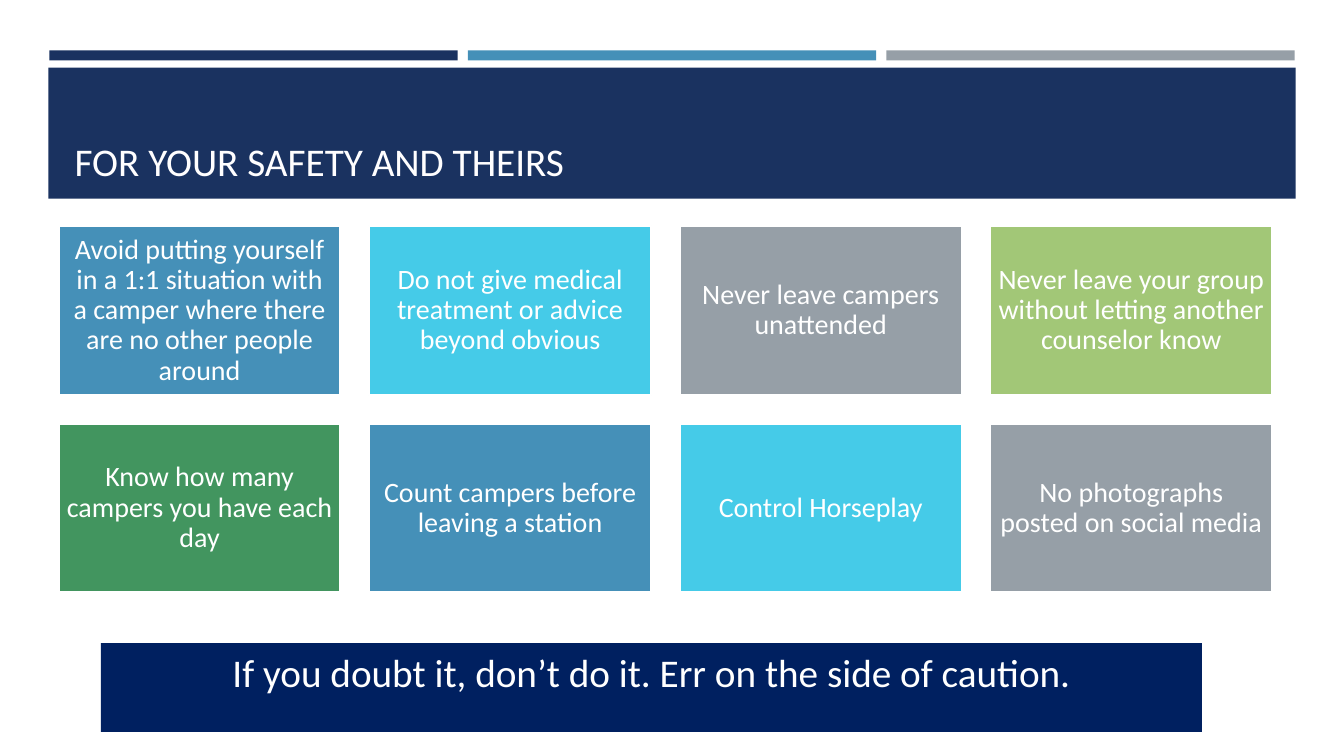
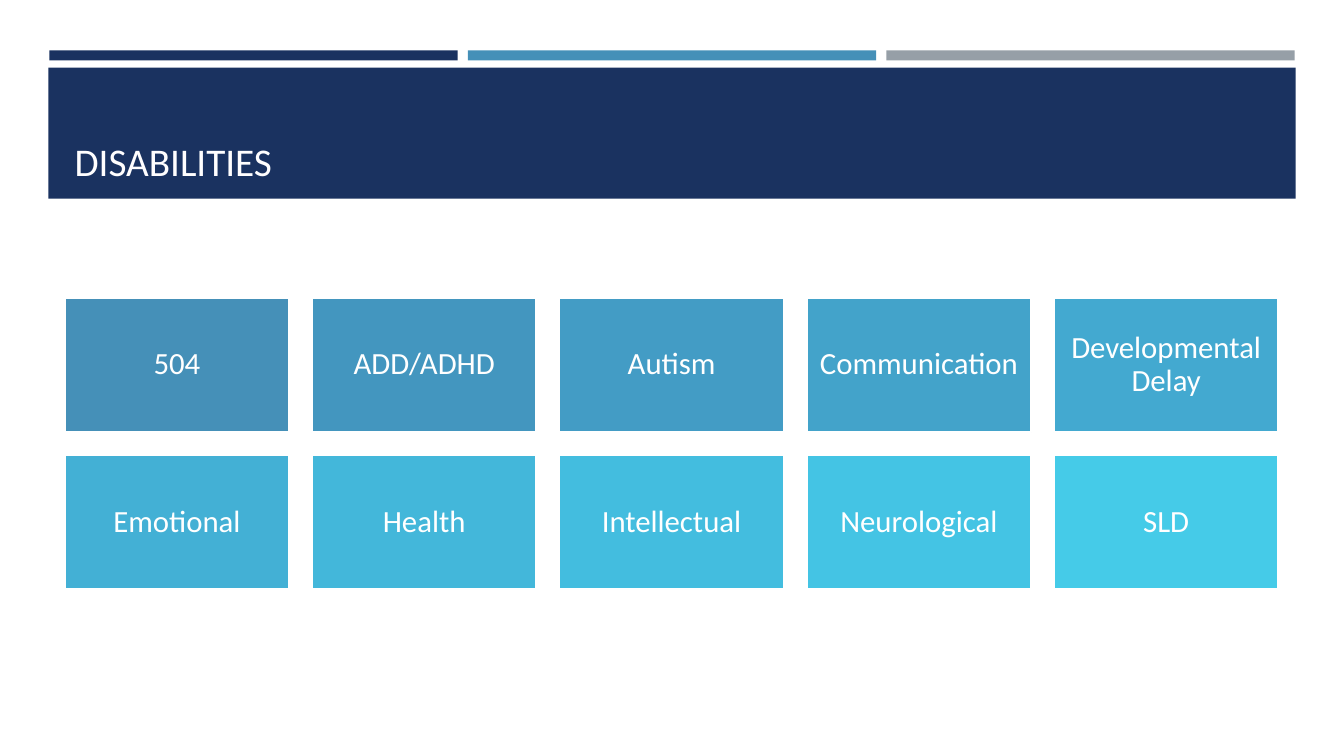
from itertools import cycle

from pptx import Presentation
from pptx.dml.color import RGBColor
from pptx.enum import shapes, text
from pptx.util import Inches, Pt

# Shared style
FONT = "Calibri"
NAVY, BLUE, GRAY = "1A3260", "4590B8", "969FA7"
CYAN, LIME, GREEN = "45CBE8", "A2C777", "42955F"
WHITE, TITLE_WHITE, BANNER_NAVY = "FFFFFF", "FFFEFF", "002060"

SAFETY_RULES = [
    "Avoid putting yourself in a 1:1 situation with a camper where there are no other people around",
    "Do not give medical treatment or advice beyond obvious",
    "Never leave campers unattended",
    "Never leave your group without letting another counselor know",
    "Know how many campers you have each day",
    "Count campers before leaving a station",
    "Control Horseplay",
    "No photographs posted on social media",
]
DISABILITIES = ["504", "ADD/ADHD", "Autism", "Communication", "Developmental Delay",
                "Emotional", "Health", "Intellectual", "Neurological", "SLD"]
BLUE_TO_CYAN = [BLUE, "4396BF", "439CC5", "43A3CA", "43A9D0",
                "43B0D5", "43B7DA", "43BDDF", "44C4E4", CYAN]


def rgb(code):
    return RGBColor.from_string(code)


def write(sp, words, size, color=WHITE, align=text.PP_ALIGN.CENTER,
          anchor=text.MSO_ANCHOR.MIDDLE, inset=None, spacing=None):
    tf = sp.text_frame
    tf.word_wrap = True
    tf.auto_size = text.MSO_AUTO_SIZE.NONE
    tf.vertical_anchor = anchor
    if inset is not None:
        tf.margin_left = tf.margin_right = Inches(inset)
        tf.margin_top = tf.margin_bottom = Inches(inset)
    p = tf.paragraphs[0]
    p.alignment = align
    p.line_spacing = spacing
    r = p.add_run()
    r.text = words
    r.font.name = FONT
    r.font.size = Pt(size)
    r.font.color.rgb = rgb(color)


def add_box(s, left, top, width, height, fill, line=None):
    sp = s.shapes.add_shape(shapes.MSO_SHAPE.RECTANGLE, Inches(left), Inches(top),
                            Inches(width), Inches(height))
    sp.shadow.inherit = False
    sp.fill.solid()
    sp.fill.fore_color.rgb = rgb(fill)
    if line:
        sp.line.color.rgb = rgb(line)
        sp.line.width = Pt(1.75)
    else:
        sp.line.fill.background()
    return sp


def add_bands_to_layout(s):
    """Draw the three strips and the title band, then move them to the layout."""
    bands = [add_box(s, 0.49 + i * 4.15, 0.5, 4.05, 0.1, color)
             for i, color in enumerate([NAVY, BLUE, GRAY])]
    bands.append(add_box(s, 0.48, 0.67, 12.37, 1.3, NAVY))
    for sp in bands:
        s.slide_layout.shapes._spTree.append(sp._element)


def add_titled_slide(prs, words):
    s = prs.slides.add_slide(prs.slide_layouts[5])
    title = s.shapes.title
    title.left, title.top = Inches(0.64), Inches(0.77)
    title.width, title.height = Inches(12.06), Inches(1.11)
    write(title, words, 28, TITLE_WHITE, text.PP_ALIGN.LEFT, text.MSO_ANCHOR.BOTTOM)
    return s


def add_tiles(s, labels, colors, left, top, width, columns, size, inset):
    """Fill a grid of 5:3 tiles; every gap is a tenth of the tile width."""
    height, gap = width * 0.6, width * 0.1
    for i, (label, color) in enumerate(zip(labels, colors)):
        row, column = divmod(i, columns)
        sp = add_box(s, left + column * (width + gap), top + row * (height + gap),
                     width, height, color, line=WHITE)
        write(sp, label, size, inset=inset, spacing=0.9)


def main():
    prs = Presentation()
    prs.slide_width, prs.slide_height = Inches(13.33), Inches(7.5)

    # Safety rules
    s = add_titled_slide(prs, "FOR YOUR SAFETY AND THEIRS")
    add_bands_to_layout(s)
    add_tiles(s, SAFETY_RULES, cycle([BLUE, CYAN, GRAY, LIME, GREEN]),
              left=0.58, top=2.24, width=2.8, columns=4, size=20, inset=0.08)
    banner = add_box(s, 1, 6.38, 10.92, 0.88, BANNER_NAVY)
    write(banner, "If you doubt it, don’t do it. Err on the side of caution.", 28,
          anchor=text.MSO_ANCHOR.TOP)

    # Disabilities
    s = add_titled_slide(prs, "DISABILITIES")
    add_tiles(s, DISABILITIES, BLUE_TO_CYAN,
              left=0.64, top=2.95, width=2.23, columns=5, size=22, inset=0.09)

    prs.save("out.pptx")


if __name__ == "__main__":
    main()
